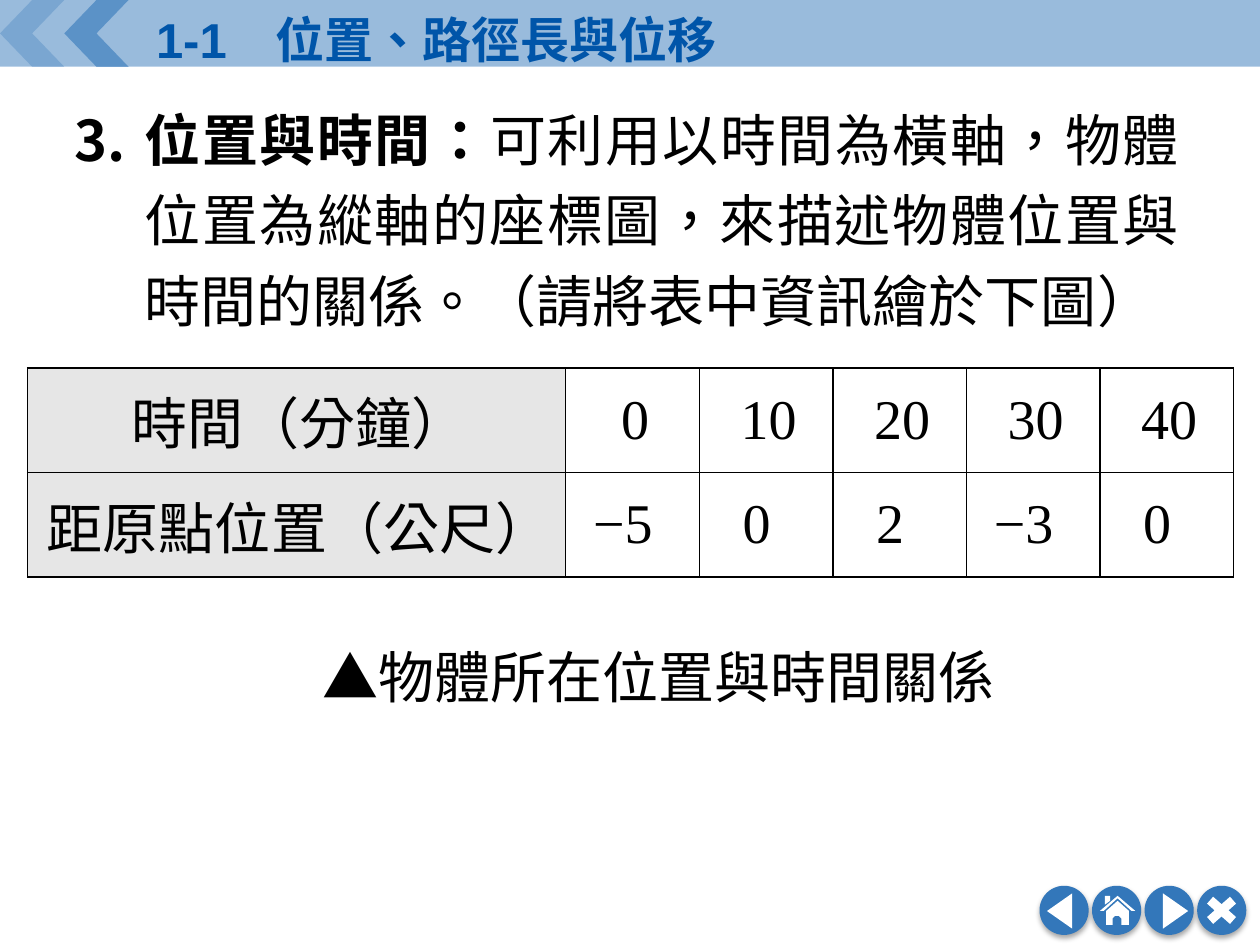
"""Build the slide on position and time, with its data table and navigation buttons."""
from dataclasses import dataclass

from lxml import etree
from pptx import Presentation
from pptx.dml.color import RGBColor
from pptx.enum.lang import MSO_LANGUAGE_ID
from pptx.enum.shapes import MSO_SHAPE
from pptx.enum.text import MSO_ANCHOR, PP_ALIGN
from pptx.oxml import parse_xml
from pptx.oxml.ns import nsdecls, qn
from pptx.util import Inches, Pt

CENTER, JUSTIFY, LEFT = PP_ALIGN.CENTER, PP_ALIGN.JUSTIFY, PP_ALIGN.LEFT
MIDDLE = MSO_ANCHOR.MIDDLE
RECTANGLE, CHEVRON, OVAL = MSO_SHAPE.RECTANGLE, MSO_SHAPE.CHEVRON, MSO_SHAPE.OVAL
TRIANGLE, MULTIPLY = MSO_SHAPE.ISOSCELES_TRIANGLE, MSO_SHAPE.MATH_MULTIPLY
CHINESE = MSO_LANGUAGE_ID.TRADITIONAL_CHINESE


@dataclass(frozen=True)
class Theme:
    blue: str = "0055A9"
    button: str = "3377BA"
    white: str = "FFFFFF"
    black: str = "000000"
    label: str = "E6E6E6"
    heading_font: str = "Arial"
    body_font: str = "Times New Roman"
    heading_size: int = 28
    body_size: int = 32


theme = Theme()


def write_text(frame, runs, size=theme.body_size, font=theme.body_font, color=theme.black,
               align=LEFT, spacing=None):
    frame.word_wrap = True
    paragraph = frame.paragraphs[0]
    paragraph.alignment = align
    paragraph.line_spacing = spacing
    for text, bold in runs:
        run = paragraph.add_run()
        run.text = text
        run.font.size, run.font.name, run.font.bold = Pt(size), font, bold
        run.font.color.rgb = RGBColor.from_string(color)
        run.font.language_id = CHINESE
    return paragraph


def add_filled(shapes, kind, box, color, alpha=100, rotation=0):
    shape = shapes.add_shape(kind, *(Inches(length) for length in box))
    shape.shadow.inherit = False
    shape.fill.solid()
    shape.fill.fore_color.rgb = RGBColor.from_string(color)
    shape.line.fill.background()
    shape.rotation = rotation
    if alpha < 100:
        fill_color = shape.fill._xPr.find(qn("a:solidFill"))[0]
        etree.SubElement(fill_color, qn("a:alpha"), val=str(alpha * 1000))
    return shape


presentation = Presentation()
presentation.slide_width, presentation.slide_height = Inches(10), Inches(7.5)
slide = presentation.slides.add_slide(presentation.slide_layouts[6])

add_filled(slide.shapes, RECTANGLE, (0, 0, 10, 0.53), theme.blue, alpha=40)
for left, alpha in ((0, 20), (0.51, 40)):
    add_filled(slide.shapes, CHEVRON, (left, 0, 0.51, 0.53), theme.blue, alpha, rotation=180)

house_outlines = (
    ((887, 715), (896, 723), (896, 734), (890, 734), (890, 729), (888, 727), (885, 727),
     (883, 729), (883, 734), (878, 734), (878, 723)),
    ((877, 711), (881, 711), (881, 715), (877, 718)),
    ((887, 711), (901, 723), (898, 723), (887, 713)),
    ((887, 711), (887, 713), (876, 723), (873, 723)),
)
button_icons = (
    (TRIANGLE, (8.27, 7.13, 0.28, 0.2), 270),
    (None, None, 0),
    (TRIANGLE, (9.19, 7.13, 0.28, 0.2), 90),
    (MULTIPLY, (9.52, 7.07, 0.35, 0.31), 0),
)
for index, (kind, box, rotation) in enumerate(button_icons):
    button = slide.shapes.add_group_shape()
    disc = add_filled(button.shapes, OVAL, (8.25 + index * 0.417, 7.03, 0.39, 0.39), theme.button)
    effects = disc._element.spPr.find(qn("a:effectLst"))
    effects.append(parse_xml(
        f'<a:outerShdw {nsdecls("a")} blurRad="{Pt(3.1)}" dist="{Pt(1.8)}" dir="5400000" '
        f'algn="t" rotWithShape="0"><a:srgbClr val="{theme.black}">'
        '<a:alpha val="35000"/></a:srgbClr></a:outerShdw>'))
    if kind is not None:
        add_filled(button.shapes, kind, box, theme.white, rotation=rotation)
        continue
    builder = button.shapes.build_freeform(*house_outlines[0][0], scale=Inches(0.01))
    for number, outline in enumerate(house_outlines):
        if number:
            builder.move_to(*outline[0])
        builder.add_line_segments(outline[1:], close=True)
    house = builder.convert_to_shape()
    house.shadow.inherit = False
    house.fill.solid()
    house.fill.fore_color.rgb = RGBColor.from_string(theme.white)
    house.line.fill.background()

title = slide.shapes.add_textbox(Inches(1.14), Inches(0.03), Inches(5.1), Inches(0.57))
write_text(title.text_frame, [("1-1　位置、路徑長與位移", True)], size=theme.heading_size,
           font=theme.heading_font, color=theme.blue)

body = slide.shapes.add_textbox(Inches(0.49), Inches(0.68), Inches(8.97), Inches(0.64))
explanation = write_text(
    body.text_frame,
    [("位置與時間：", True),
     ("可利用以時間為橫軸，物體位置為縱軸的座標圖，來描述物體位置與時間的關係。"
      "（請將表中資訊繪於下圖）", False)],
    align=JUSTIFY, spacing=1.2)
properties = explanation._p.get_or_add_pPr()
properties.set("marL", str(Inches(0.56)))
properties.set("indent", str(Inches(-0.56)))
etree.SubElement(properties, qn("a:buFont"), typeface=theme.heading_font)
etree.SubElement(properties, qn("a:buAutoNum"), type="arabicPeriod", startAt="3")

rows = (
    ("時間（分鐘）", "0", "10", "20", "30", "40"),
    ("距原點位置（公尺）", "−5", "0", "2", "−3", "0"),
)
table = slide.shapes.add_table(2, 6, Inches(0.22), Inches(2.92), Inches(9.57), Inches(1.65)).table
table.first_row = table.horz_banding = False
for index, column in enumerate(table.columns):
    column.width = Inches(1.06 if index else 4.27)
for row_index, values in enumerate(rows):
    table.rows[row_index].height = Inches(0.83)
    for column_index, value in enumerate(values):
        cell = table.cell(row_index, column_index)
        cell.vertical_anchor = MIDDLE
        cell.margin_left = cell.margin_top = cell.margin_bottom = Inches(0.04)
        cell.margin_right = Inches(0.23 if row_index and column_index else 0.04)
        paragraph = write_text(cell.text_frame, [(value, False)], align=CENTER)
        paragraph.space_after = Pt(10)
        paragraph._p.get_or_add_pPr().set("marL", str(Inches(0.04)))
        if column_index:
            cell.fill.background()
        else:
            cell.fill.solid()
            cell.fill.fore_color.rgb = RGBColor.from_string(theme.label)
        cell_properties = cell._tc.get_or_add_tcPr()
        for position, side in enumerate(("lnL", "lnR", "lnT", "lnB")):
            cell_properties.insert(position, parse_xml(
                f'<a:{side} {nsdecls("a")} w="{Pt(1)}"><a:solidFill>'
                f'<a:srgbClr val="{theme.black}"/></a:solidFill></a:{side}>'))

caption = slide.shapes.add_textbox(Inches(2.45), Inches(4.94), Inches(5.56), Inches(0.69))
write_text(caption.text_frame, [("▲物體所在位置與時間關係", False)], align=CENTER, spacing=1.2)

presentation.save("out.pptx")
